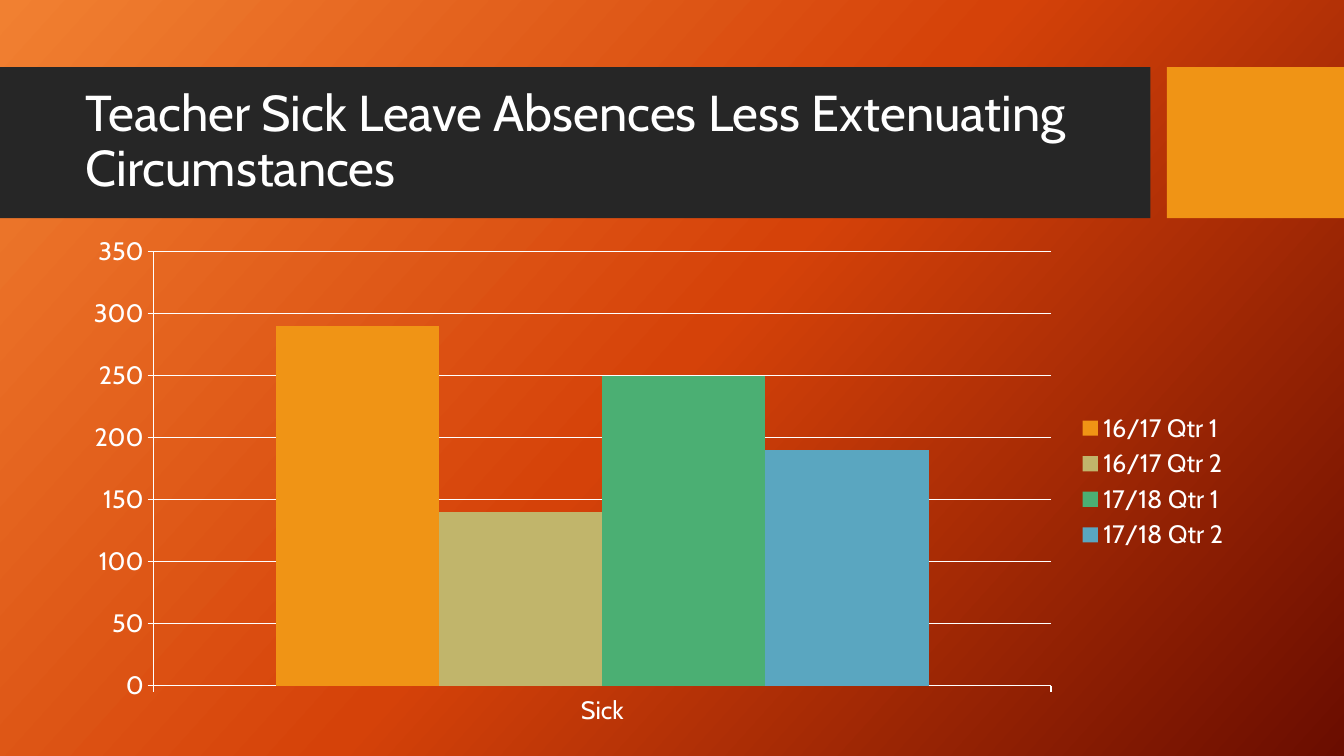
import copy

import pptx
import pptx.chart.data
import pptx.dml.color
import pptx.enum.chart
import pptx.enum.text
import pptx.enum.shapes
import pptx.oxml.ns
import pptx.util

Pt = pptx.util.Pt
FONT = "Cabin"
COLORS = {
    "white": "FFFFFF",
    "band": "262626",
    "orange": "F09415",
    "sand": "C1B56B",
    "green": "4BAF73",
    "blue": "5AA6C0",
}
BACKDROP = [(0, "F18031"), (0.5, "D54209"), (1, "6A0D00")]
ABSENCES = [
    ("16/17 Qtr 1", 290, "orange"),
    ("16/17 Qtr 2", 140, "sand"),
    ("17/18 Qtr 1", 250, "green"),
    ("17/18 Qtr 2", 190, "blue"),
]


def rgb(value):
    return pptx.dml.color.RGBColor.from_string(value)


def style_font(font, size):
    font.name = FONT
    font.size = Pt(size)
    font.color.rgb = rgb(COLORS["white"])


def paint_background(slide):
    fill = slide.background.fill
    fill.gradient()
    fill.gradient_angle = 360 - 42
    stop_list = slide.element.find(".//" + pptx.oxml.ns.qn("a:gsLst"))
    stop_list.append(copy.deepcopy(stop_list[-1]))
    for stop, (position, color) in zip(fill.gradient_stops, BACKDROP):
        stop.position = position
        stop.color.rgb = rgb(color)


def add_band(slide, left, width, color):
    band = slide.shapes.add_shape(
        pptx.enum.shapes.MSO_SHAPE.RECTANGLE, Pt(left), Pt(48), Pt(width), Pt(107.8)
    )
    band.shadow.inherit = False
    band.fill.solid()
    band.fill.fore_color.rgb = rgb(COLORS[color])
    band.line.fill.background()


def set_title(slide, text):
    title = slide.shapes.title
    title.element.getparent().append(title.element)
    title.left, title.top, title.width, title.height = Pt(53.8), Pt(59.4), Pt(757), Pt(85)
    frame = title.text_frame
    frame.text = text
    frame.word_wrap = True
    frame.auto_size = pptx.enum.text.MSO_AUTO_SIZE.NONE
    frame.vertical_anchor = pptx.enum.text.MSO_ANCHOR.MIDDLE
    heading = frame.paragraphs[0]
    heading.alignment = pptx.enum.text.PP_ALIGN.LEFT
    heading.line_spacing = 0.9
    style_font(heading.runs[0].font, 36)


def style_line(line):
    line.color.rgb = rgb(COLORS["white"])
    line.width = Pt(0.75)


def add_absence_chart(slide):
    data = pptx.chart.data.CategoryChartData()
    data.categories = ["Sick"]
    for quarter, days, _ in ABSENCES:
        data.add_series(quarter, [days])
    chart = slide.shapes.add_chart(
        pptx.enum.chart.XL_CHART_TYPE.COLUMN_CLUSTERED,
        Pt(50.4), Pt(161.8), Pt(835.2), Pt(364.3), data,
    ).chart
    style_font(chart.font, 18)
    chart.has_title = False
    chart.has_legend = True
    chart.legend.position = pptx.enum.chart.XL_LEGEND_POSITION.RIGHT
    chart.legend.include_in_layout = False

    plot = chart.plots[0]
    plot.gap_width = 150
    plot.vary_by_categories = False
    for series, (_, _, color) in zip(plot.series, ABSENCES):
        series.format.fill.solid()
        series.format.fill.fore_color.rgb = rgb(COLORS[color])

    for axis in (chart.category_axis, chart.value_axis):
        axis.major_tick_mark = pptx.enum.chart.XL_TICK_MARK.OUTSIDE
        style_line(axis.format.line)
    days_axis = chart.value_axis
    days_axis.minimum_scale = 0
    days_axis.maximum_scale = 350
    days_axis.major_unit = 50
    days_axis.has_major_gridlines = True
    style_line(days_axis.major_gridlines.format.line)


def main():
    deck = pptx.Presentation()
    deck.slide_width, deck.slide_height = Pt(960), Pt(540)
    slide = deck.slides.add_slide(deck.slide_layouts[5])
    paint_background(slide)
    add_band(slide, 0, 821.8, "band")
    add_band(slide, 833.5, 126.5, "orange")
    set_title(slide, "Teacher Sick Leave Absences Less Extenuating Circumstances")
    add_absence_chart(slide)
    deck.save("out.pptx")


if __name__ == "__main__":
    main()
